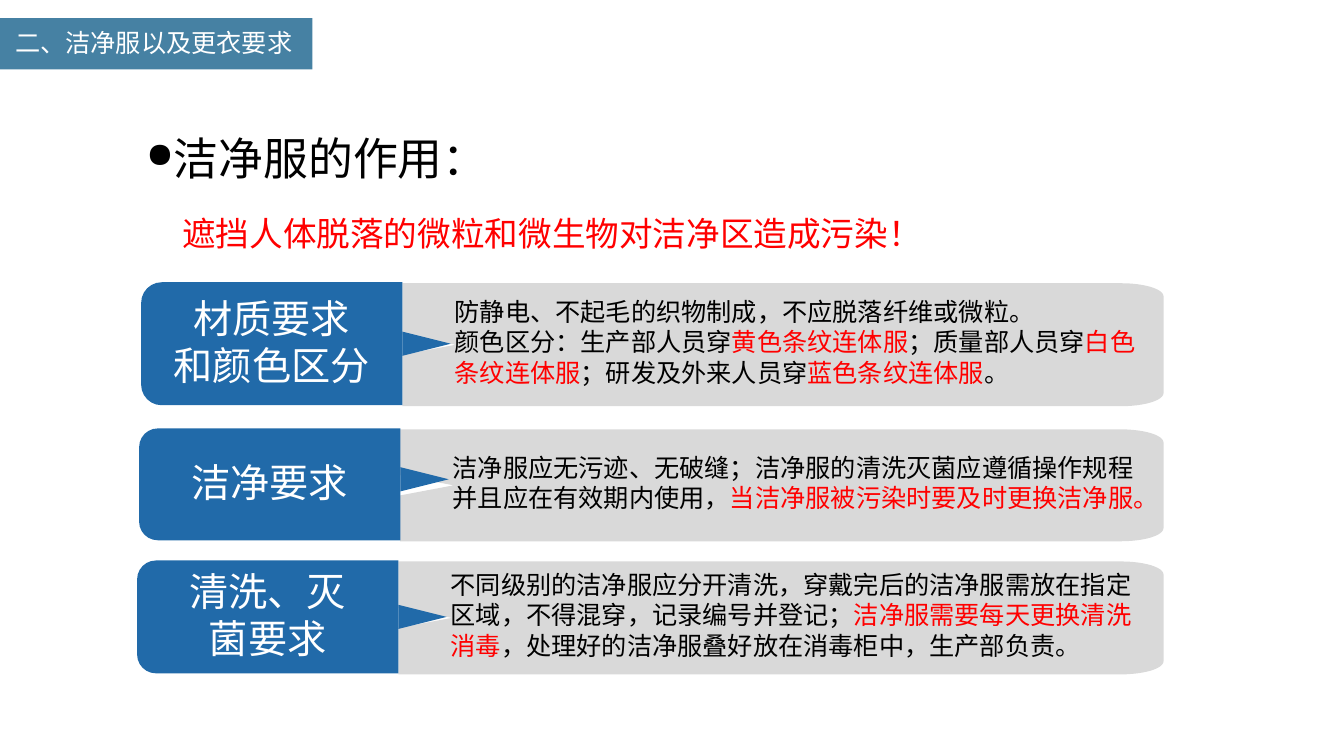
import math
from dataclasses import dataclass

from lxml import etree
from pptx import Presentation
from pptx import util as u
from pptx.dml.color import RGBColor
from pptx.enum import shapes, text
from pptx.oxml.ns import qn


@dataclass(frozen=True)
class Theme:
    face: str = "Noto Sans CJK SC"
    band: RGBColor = RGBColor(0x46, 0x81, 0xA3)
    label: RGBColor = RGBColor(0x21, 0x6A, 0xA9)
    panel: RGBColor = RGBColor(0xD9, 0xD9, 0xD9)
    white: RGBColor = RGBColor(0xFF, 0xFF, 0xFF)
    ink: RGBColor = RGBColor(0, 0, 0)
    accent: RGBColor = RGBColor(0xFF, 0, 0)
    heading: int = 32
    label_size: int = 28
    message: int = 24
    body: int = 18


@dataclass(frozen=True)
class Card:
    left: float
    top: float
    height: float
    label_width: float
    label: tuple
    label_lines: int
    body: tuple
    body_lines: int
    arrow_shift: float = 0


THEME = Theme()
COLUMNS, ROWS = 13.33, 7.5
CELL = u.Inches(1)
LABEL_WIDTH, PANEL_RIGHT = 2.59, 11.54
LABEL_LINE, BODY_LINE = 0.47, 0.3
ARROW_LENGTH, ARROW_WIDTH = 0.48, 0.24

# Text between vertical bars is set in the accent colour.
CARDS = [
    Card(1.4, 2.8, 1.22, 2, ("材质要求", "和颜色区分"), 2,
         ("防静电、不起毛的织物制成，不应脱落纤维或微粒。",
          "颜色区分：生产部人员穿|黄色条纹连体服|；质量部人员穿|白色条纹连体服|"
          "；研发及外来人员穿|蓝色条纹连体服|。"), 3),
    Card(1.38, 4.25, 1.11, 1.85, ("洁净要求",), 1,
         ("洁净服应无污迹、无破缝；洁净服的清洗灭菌应遵循操作规程并且应在有效期内使用，"
          "|当洁净服被污染时要及时更换洁净服。|",), 2, -0.05),
    Card(1.36, 5.56, 1.12, 1.85, ("清洗、灭菌要求",), 2,
         ("不同级别的洁净服应分开清洗，穿戴完后的洁净服需放在指定区域，不得混穿，记录编号并登记；"
          "|洁净服需要每天更换清洗消毒|，处理好的洁净服叠好放在消毒柜中，生产部负责。",), 3),
]


def cells(*counts):
    return [round(count * CELL) for count in counts]


def paint(shape, colour):
    shape.shadow.inherit = False
    shape.fill.solid()
    shape.fill.fore_color.rgb = colour
    shape.line.fill.background()


def add_block(slide, kind, left, top, width, height, colour, rotation=0):
    """Add a preset shape covering the given box after its rotation."""
    if rotation in (90, 270):
        left, top = left + (width - height) / 2, top + (height - width) / 2
        width, height = height, width
    shape = slide.shapes.add_shape(kind, *cells(left, top, width, height))
    shape.rotation = rotation
    paint(shape, colour)
    return shape


def write(paragraph, content, size, colour, align=text.PP_ALIGN.LEFT):
    paragraph.alignment = align
    font = paragraph.font
    font.name, font.size = THEME.face, u.Pt(size)
    font.color.rgb = colour
    defaults = paragraph._p.pPr.find(qn("a:defRPr"))
    etree.SubElement(defaults, qn("a:ea")).set("typeface", THEME.face)
    for index, piece in enumerate(content.split("|")):
        if piece:
            run = paragraph.add_run()
            run.text = piece
            if index % 2:
                run.font.color.rgb = THEME.accent


def add_text(slide, box, lines, size, colour, align=text.PP_ALIGN.LEFT):
    frame = slide.shapes.add_textbox(*cells(*box)).text_frame
    frame.word_wrap = True
    frame.margin_left = frame.margin_right = 0
    frame.margin_top = frame.margin_bottom = 0
    for index, line in enumerate(lines):
        paragraph = frame.add_paragraph() if index else frame.paragraphs[0]
        write(paragraph, line, size, colour, align)


def add_title(slide, content):
    band = add_block(slide, shapes.MSO_SHAPE.RECTANGLE, 0, 0.18, 3.1, 0.51, THEME.band)
    title = slide.shapes.title
    band._element.addnext(title._element)
    title.left, title.top, title.width, title.height = cells(0.05, 0.22, 2.98, 0.4)
    frame = title.text_frame
    frame.auto_size = text.MSO_AUTO_SIZE.NONE
    frame.word_wrap = False
    frame.vertical_anchor = text.MSO_ANCHOR.MIDDLE
    write(frame.paragraphs[0], content, THEME.body, THEME.white)


def add_heading(slide, heading, message):
    frame = slide.shapes.add_textbox(*cells(1.35, 0.98, 11.29, 1.62)).text_frame
    frame.word_wrap = True
    first, second = frame.paragraphs[0], frame.add_paragraph()
    write(first, heading, THEME.heading, THEME.ink, text.PP_ALIGN.JUSTIFY)
    write(second, message, THEME.message, THEME.accent, text.PP_ALIGN.JUSTIFY)
    first.line_spacing = second.line_spacing = 1.5
    second.space_before = u.Pt(6)
    second._p.pPr.set("marL", str(u.Inches(0.36)))
    second._p.pPr.set("indent", "0")
    defaults = first._p.pPr.find(qn("a:defRPr"))
    defaults.addprevious(etree.Element(qn("a:buSzPct"), val="78000"))
    defaults.addprevious(etree.Element(qn("a:buChar"), char="●"))


def add_panel(slide, left, top, height):
    """Draw the notched panel with elliptical right corners."""
    radius_x, radius_y = 0.42, 0.13
    bottom, middle = top + height, top + height / 2
    angles = [math.radians(step * 7.5) for step in range(13)]
    corner = [(PANEL_RIGHT - radius_x * (1 - math.sin(angle)),
               radius_y * (1 - math.cos(angle))) for angle in angles]
    points = [(x, top + y) for x, y in corner]
    points += [(x, bottom - y) for x, y in reversed(corner)]
    points += [(left, bottom), (left, middle + 0.1),
               (left + 0.53, middle), (left, middle - 0.1)]
    builder = slide.shapes.build_freeform(*cells(left, top))
    builder.add_line_segments([cells(*point) for point in points], close=True)
    paint(builder.convert_to_shape(), THEME.panel)


def add_card(slide, card):
    label_right = card.left + LABEL_WIDTH
    middle = card.top + card.height / 2
    add_panel(slide, label_right, card.top + 0.01, card.height)
    add_block(slide, shapes.MSO_SHAPE.ROUND_2_SAME_RECTANGLE, card.left, card.top,
              LABEL_WIDTH, card.height, THEME.label, 270)
    add_block(slide, shapes.MSO_SHAPE.ISOSCELES_TRIANGLE, label_right,
              middle + card.arrow_shift - ARROW_WIDTH / 2,
              ARROW_LENGTH, ARROW_WIDTH, THEME.label, 90)
    text_middle = middle - 0.02
    label_height = card.label_lines * LABEL_LINE
    label_left = card.left + (LABEL_WIDTH - card.label_width) / 2
    add_text(slide, (label_left, text_middle - label_height / 2, card.label_width, label_height),
             card.label, THEME.label_size, THEME.white, text.PP_ALIGN.CENTER)
    body_height = card.body_lines * BODY_LINE
    body_left = card.left + 3.11
    add_text(slide, (body_left, text_middle - body_height / 2, 11.27 - body_left, body_height),
             card.body, THEME.body, THEME.ink)


def main():
    presentation = Presentation()
    presentation.slide_width, presentation.slide_height = cells(COLUMNS, ROWS)
    slide = presentation.slides.add_slide(presentation.slide_layouts.get_by_name("Title Only"))
    add_title(slide, "二、洁净服以及更衣要求")
    add_heading(slide, "洁净服的作用：", "遮挡人体脱落的微粒和微生物对洁净区造成污染！")
    for card in CARDS:
        add_card(slide, card)
    presentation.save("out.pptx")


if __name__ == "__main__":
    main()
